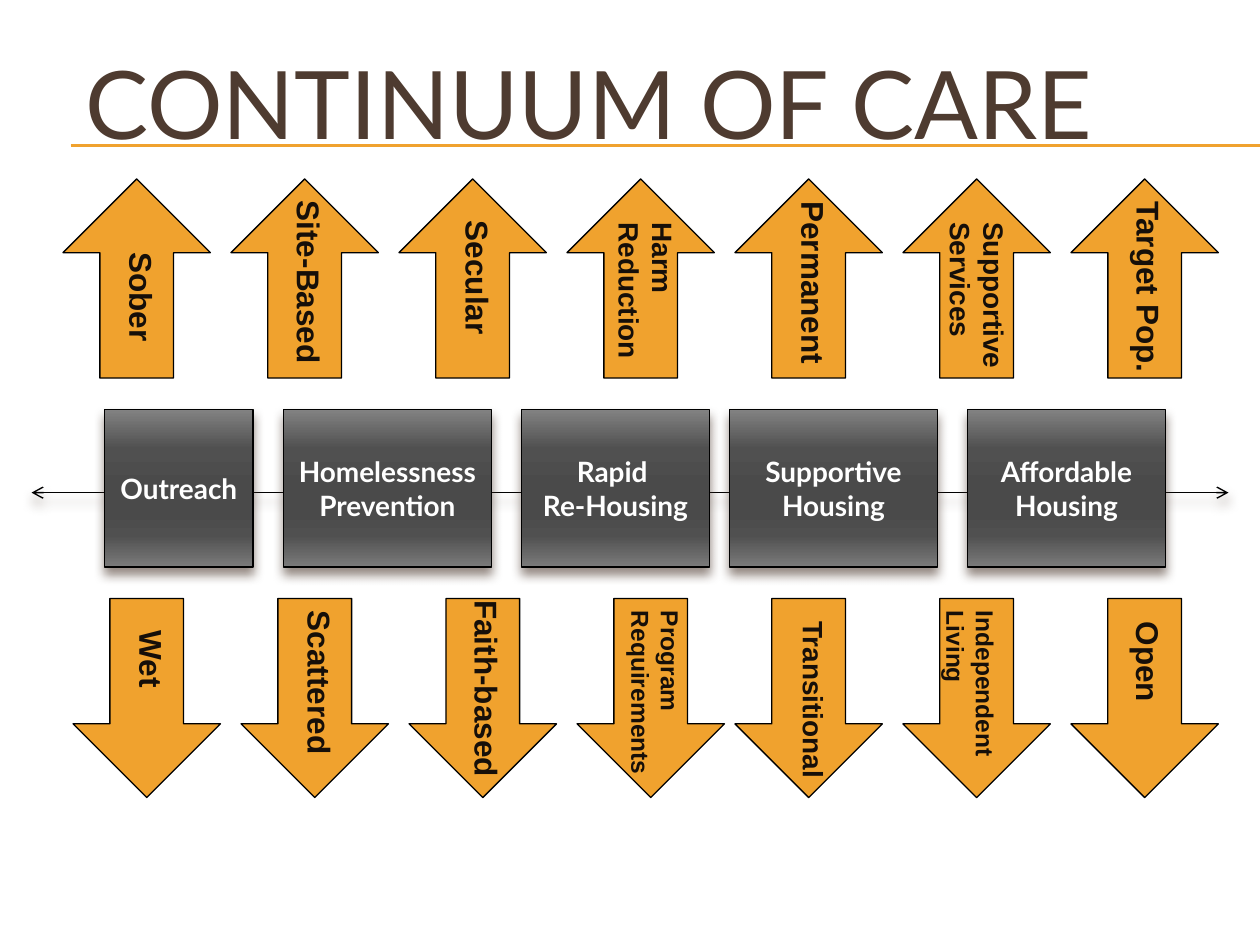
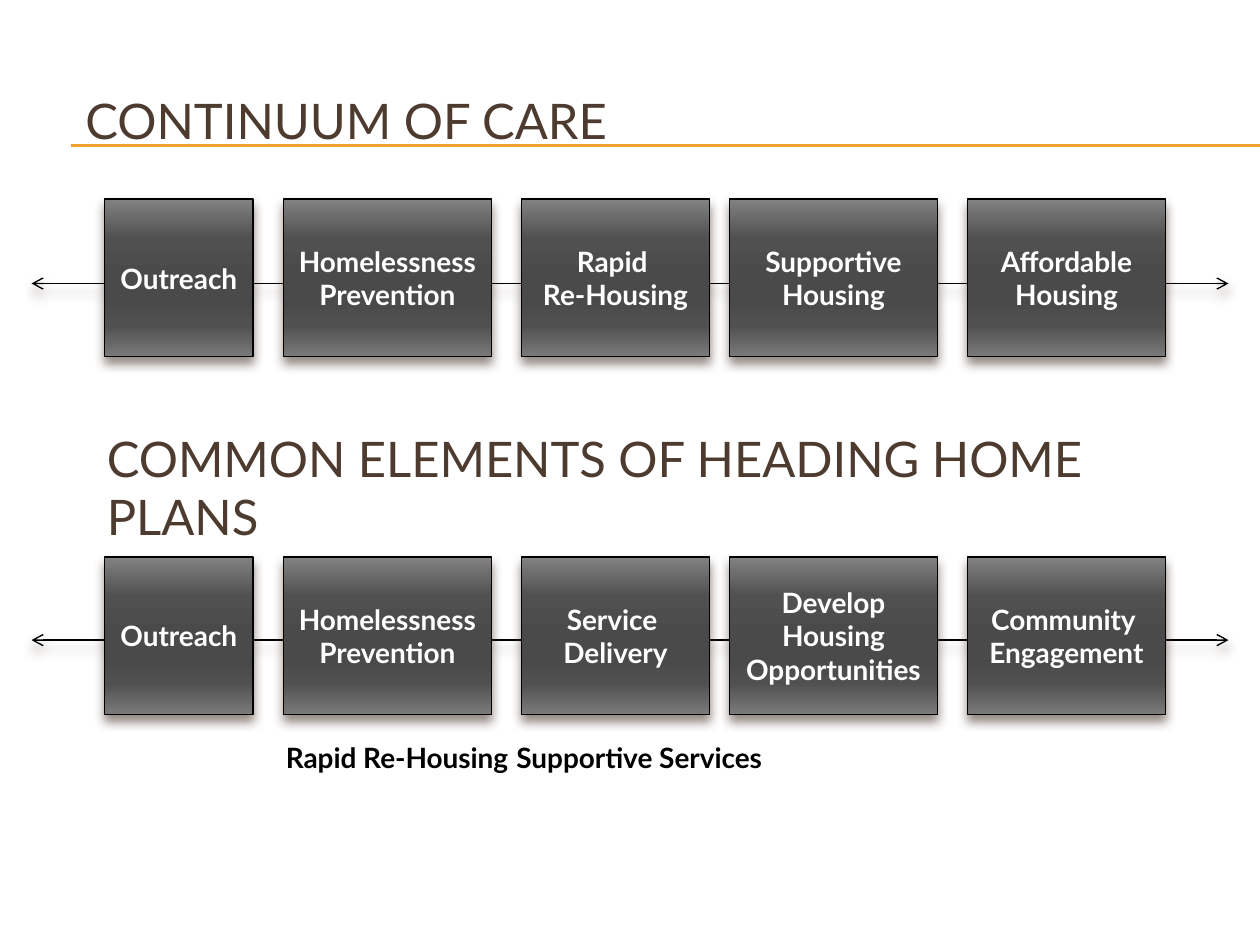
from typing import NamedTuple

from lxml.etree import SubElement
from pptx import Presentation
from pptx.dml.color import RGBColor
from pptx.enum.shapes import MSO_CONNECTOR as Connector, MSO_SHAPE as Shape
from pptx.enum.text import MSO_ANCHOR as Anchor, MSO_AUTO_SIZE as AutoSize, PP_ALIGN as Align
from pptx.oxml.ns import qn
from pptx.util import Inches, Pt

COLORS = {
    "accent": "F0A22E",
    "title": "4E3B30",
    "label": "160F09",
    "black": "000000",
    "white": "FFFFFF",
}
BOX_GRADIENT = [(0, "828282"), (25, "505050"), (50, "4A4A4A"),
                (65, "4A4A4A"), (80, "505050"), (100, "7A7A7A")]
HEADING_FONT = "Lato"
LABEL_FONT = "Arial"
BOX_HEIGHT = 1.25
BOX_LINE = 0.79
ARROW_SIZE = (1.17, 1.58)
ARROW_PITCH = 4 / 3


class Box(NamedTuple):
    left: float
    width: float


class Label(NamedTuple):
    text: str
    left: float
    top: float
    width: float
    size: int = 18
    lines: int = 1


class Style(NamedTuple):
    font: str
    size: int
    color: str
    bold: bool = True


BOXES = [Box(0.83, 1.18), Box(2.25, 1.65), Box(4.14, 1.49), Box(5.79, 1.65), Box(7.68, 1.57)]
CARE_STAGES = ["Outreach", "Homelessness\nPrevention", "Rapid \nRe-Housing",
               "Supportive\nHousing", "Affordable\nHousing"]
PLAN_ELEMENTS = ["Outreach", "Homelessness\nPrevention", "Service \nDelivery",
                 "Develop\nHousing\nOpportunities", "Community \nEngagement"]
UPPER_LABELS = [
    Label("Sober", 0.5, 2.33, 1.25),
    Label("Site-Based", 1.58, 2.17, 1.75),
    Label("Secular", 3.17, 2.08, 1.25),
    Label("Harm Reduction", 4.38, 2.1, 1.5, 16, 2),
    Label("Permanent", 5.71, 2.05, 1.5),
    Label("Supportive Services", 6.97, 2.14, 1.58, 16, 2),
    Label("Target Pop.", 8.33, 2.09, 1.58),
]
LOWER_LABELS = [
    Label("Wet", 0.58, 5.33, 1.25),
    Label("Scattered", 1.83, 5.26, 1.42),
    Label("Faith-based", 2.99, 5.34, 1.75),
    Label("Program Requirements", 4.37, 5.3, 1.67, 14, 2),
    Label("Transitional", 5.71, 5.4, 1.5, 16),
    Label("Independent Living", 6.83, 5.34, 1.75, 14, 2),
    Label("Open", 8.49, 5.26, 1.25),
]
SERVICE_LABELS = [
    Label("Rapid Re-Housing", 2.17, 5.83, 2.42, 16),
    Label("Supportive Services", 4, 5.83, 2.42, 16),
]


def rgb(name: str) -> RGBColor:
    return RGBColor.from_string(COLORS[name])


def write(shape, text: str, style: Style, align=Align.LEFT) -> None:
    shape.text_frame.text = text
    for paragraph in shape.text_frame.paragraphs:
        paragraph.alignment = align
        for run in paragraph.runs:
            run.font.name = style.font
            run.font.size = Pt(style.size)
            run.font.bold = style.bold
            run.font.color.rgb = rgb(style.color)


def set_effects(shape, shadowed: bool = False) -> None:
    effects = SubElement(shape.element.spPr, qn("a:effectLst"))
    if shadowed:
        shadow = SubElement(effects, qn("a:outerShdw"), blurRad=str(Pt(6)),
                            dist=str(Pt(4)), dir="5400000", rotWithShape="0")
        color = SubElement(shadow, qn("a:srgbClr"), val=COLORS["title"])
        SubElement(color, qn("a:alpha"), val="60000")


def set_outline(shape, color: str, width: float) -> None:
    shape.line.color.rgb = rgb(color)
    shape.line.width = Pt(width)


def add_line(slide, left: float, right: float, y: float, color: str, width: float):
    line = slide.shapes.add_connector(
        Connector.STRAIGHT, Inches(left), Inches(y), Inches(right), Inches(y))
    set_outline(line, color, width)
    return line


def add_title(slide, text: str, left: float, top: float, size: int) -> None:
    title = slide.shapes.add_textbox(Inches(left), Inches(top), Inches(9.17), Inches(1.57))
    title.text_frame.word_wrap = True
    title.text_frame.vertical_anchor = Anchor.MIDDLE
    write(title, text, Style(HEADING_FONT, size, "title", False))


def add_label(slide, label: Label, font: str, color: str, rotation: int = 0) -> None:
    height = label.lines * label.size * 1.2 / 72 + 0.1
    box = slide.shapes.add_textbox(
        Inches(label.left), Inches(label.top), Inches(label.width), Inches(height))
    box.rotation = rotation
    box.text_frame.word_wrap = True
    box.text_frame.auto_size = AutoSize.SHAPE_TO_FIT_TEXT
    write(box, label.text, Style(font, label.size, color))


def add_box(slide, box: Box, top: float, text: str) -> None:
    shape = slide.shapes.add_shape(
        Shape.RECTANGLE, Inches(box.left), Inches(top), Inches(box.width), Inches(BOX_HEIGHT))
    shape.fill.gradient()
    shape.fill.gradient_angle = 270
    stops = shape.element.spPr.find(qn("a:gradFill")).find(qn("a:gsLst"))
    stops.clear()
    for position, color in BOX_GRADIENT:
        stop = SubElement(stops, qn("a:gs"), pos=str(position * 1000))
        SubElement(stop, qn("a:srgbClr"), val=color)
    set_outline(shape, "black", BOX_LINE)
    set_effects(shape, shadowed=True)
    shape.text_frame.word_wrap = False
    shape.text_frame.vertical_anchor = Anchor.MIDDLE
    write(shape, text, Style(HEADING_FONT, 16, "white"), Align.CENTER)


def add_flow(slide, top: float, axis_y: float, texts: list[str]) -> None:
    axis = add_line(slide, 0.25, 9.75, axis_y, "black", BOX_LINE)
    outline = axis.element.spPr.find(qn("a:ln"))
    for end in ("a:headEnd", "a:tailEnd"):
        SubElement(outline, qn(end), type="arrow")
    set_effects(axis, shadowed=True)
    for box, text in zip(BOXES, texts):
        add_box(slide, box, top, text)


def add_arrow(slide, left: float, top: float, rotation: int) -> None:
    width, height = ARROW_SIZE
    arrow = slide.shapes.add_shape(
        Shape.DOWN_ARROW, Inches(left), Inches(top), Inches(width), Inches(height))
    arrow.rotation = rotation
    arrow.fill.solid()
    arrow.fill.fore_color.rgb = rgb("accent")
    set_outline(arrow, "black", 0.75)
    arrow.shadow.inherit = False


def add_slide(presentation, title_top: float, title_size: int):
    slide = presentation.slides.add_slide(presentation.slide_layouts[6])
    for y in (1.15, 1.16):
        set_effects(add_line(slide, 0.56, 10, y, "accent", 0.75))
    add_title(slide, "CONTINUUM OF CARE", 0.58, title_top, title_size)
    return slide


def build_care_slide(presentation) -> None:
    slide = add_slide(presentation, 0.02, 54)
    add_flow(slide, 3.25, 3.91, CARE_STAGES)
    for column in range(len(UPPER_LABELS)):
        left = 0.5 + column * ARROW_PITCH
        add_arrow(slide, left, 1.42, 180)
        add_arrow(slide, left + (0.08 if column < 4 else 0), 4.75, 0)
    for label in UPPER_LABELS + LOWER_LABELS:
        add_label(slide, label, LABEL_FONT, "label", 90)


def build_plans_slide(presentation) -> None:
    slide = add_slide(presentation, 0.17, 28)
    add_flow(slide, 1.58, 2.25, CARE_STAGES)
    add_flow(slide, 4.42, 5.08, PLAN_ELEMENTS)
    add_title(slide, "COMMON ELEMENTS OF HEADING HOME PLANS", 0.75, 3.08, 28)
    for label in SERVICE_LABELS:
        add_label(slide, label, HEADING_FONT, "black")


def main() -> None:
    presentation = Presentation()
    presentation.slide_width = Inches(10)
    presentation.slide_height = Inches(7.5)
    build_care_slide(presentation)
    build_plans_slide(presentation)
    presentation.save("out.pptx")


if __name__ == "__main__":
    main()
